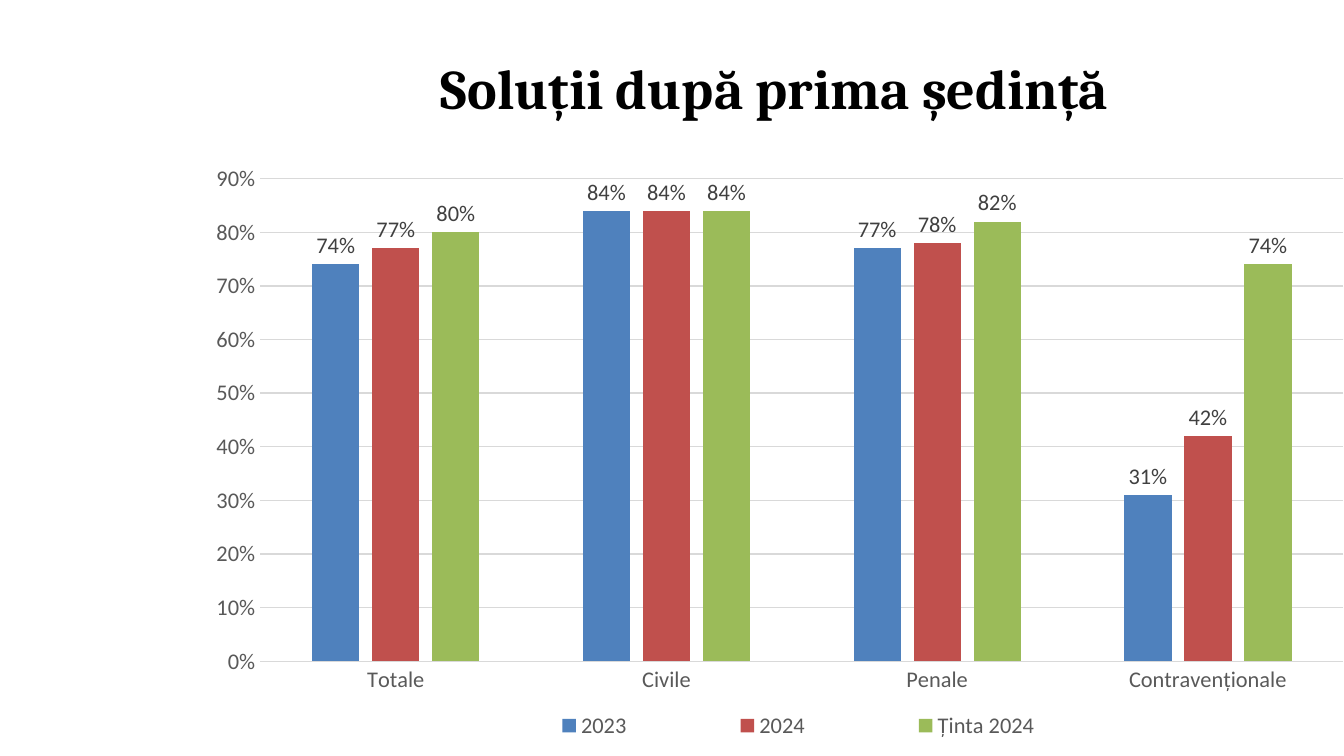
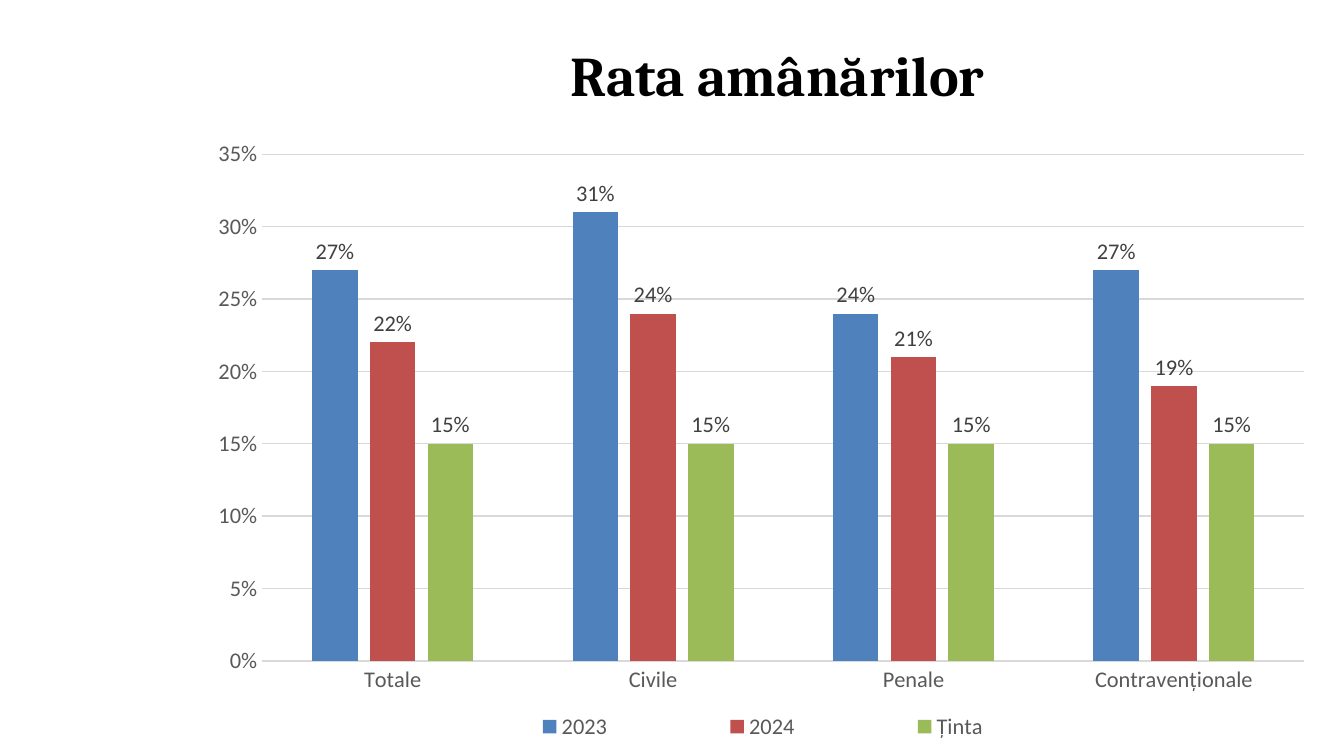
from dataclasses import dataclass

from lxml.etree import SubElement
from pptx import Presentation
from pptx.chart.data import CategoryChartData
from pptx.dml.color import RGBColor
from pptx.enum.chart import (XL_CHART_TYPE, XL_LABEL_POSITION,
                             XL_LEGEND_POSITION, XL_TICK_MARK)
from pptx.enum.text import MSO_ANCHOR, PP_ALIGN
from pptx.oxml import parse_xml
from pptx.oxml.ns import nsdecls, qn
from pptx.util import Inches, Pt


@dataclass(frozen=True)
class Theme:
    title_font: str = "Cambria"
    chart_font: str = "Calibri"
    title_size: int = 30
    chart_size: int = 12
    title_color: str = "000000"
    axis_color: str = "595959"
    label_color: str = "404040"
    grid_color: str = "D9D9D9"
    series_colors: tuple = ("4F81BD", "C0504D", "9BBB59")
    grid_width: float = 0.75


THEME = Theme()
PERCENT = "0%"
CASE_TYPES = ["Totale", "Civile", "Penale", "Contravenționale"]

# Boxes are left, top, width, height in inches;
# plot and legend are the same in percent of the chart.
SLIDES = [
    {
        "title": "Soluții după prima ședință",
        "title_box": (2.25, 0.39, 7.03, 0.51),
        "chart_box": (1.35, 0.12, 8.65, 5.5),
        "plot": (6.8, 22, 93.2, 65.3),
        "legend": (23.6, 92.5, 59, 7),
        "scale": (0.9, 0.1),
        "rates": {
            "2023": (0.74, 0.84, 0.77, 0.31),
            "2024": (0.77, 0.84, 0.78, 0.42),
            "Ținta 2024": (0.8, 0.84, 0.82, 0.74),
        },
    },
    {
        "title": "Rata amânărilor",
        "title_box": (1.78, 0.25, 8.01, 0.61),
        "chart_box": (1.31, 0.79, 8.69, 4.84),
        "plot": (7.4, 7.4, 89.2, 77.9),
        "legend": (21.5, 91.4, 57.5, 8),
        "scale": (0.35, 0.05),
        "rates": {
            "2023": (0.27, 0.31, 0.24, 0.27),
            "2024": (0.22, 0.24, 0.21, 0.19),
            "Ținta": (0.15, 0.15, 0.15, 0.15),
        },
    },
]


def style_font(font, name, size, color):
    font.name = name
    font.size = Pt(size)
    font.color.rgb = RGBColor.from_string(color)


def style_chart_font(font, color):
    style_font(font, THEME.chart_font, THEME.chart_size, color)


def style_line(line):
    line.color.rgb = RGBColor.from_string(THEME.grid_color)
    line.width = Pt(THEME.grid_width)


def add_title(slide, title, box):
    frame = slide.shapes.add_textbox(*map(Inches, box)).text_frame
    frame.word_wrap = True
    frame.vertical_anchor = MSO_ANCHOR.MIDDLE
    frame.text = title
    heading = frame.paragraphs[0]
    heading.alignment = PP_ALIGN.CENTER
    font = heading.runs[0].font
    style_font(font, THEME.title_font, THEME.title_size, THEME.title_color)
    font.bold = True


def place_part(part, box, position, target=()):
    """Give a chart part a fixed layout as its child number position."""
    for layout in part.findall(qn("c:layout")):
        part.remove(layout)
    layout = parse_xml(f"<c:layout {nsdecls('c')}/>")
    part.insert(position, layout)
    manual = SubElement(layout, qn("c:manualLayout"))
    shares = [round(percent / 100, 3) for percent in box]
    settings = [*target, ("xMode", "edge"), ("yMode", "edge"), *zip("xywh", shares)]
    for tag, value in settings:
        SubElement(manual, qn(f"c:{tag}")).set("val", str(value))


def place_parts(chart, plot, legend):
    """Fix the plot and legend and leave the chart background clear."""
    chart_part = chart.element.find(qn("c:chart"))
    place_part(chart_part.find(qn("c:plotArea")), plot, 0, [("layoutTarget", "inner")])
    place_part(chart_part.find(qn("c:legend")), legend, 1)
    chart_part.addnext(parse_xml(
        f"<c:spPr {nsdecls('c', 'a')}><a:noFill/><a:ln><a:noFill/></a:ln></c:spPr>"))


def style_axes(chart, scale):
    rate_axis, case_axis = chart.value_axis, chart.category_axis
    for axis in (rate_axis, case_axis):
        axis.major_tick_mark = axis.minor_tick_mark = XL_TICK_MARK.NONE
        style_chart_font(axis.tick_labels.font, THEME.axis_color)
    style_line(case_axis.format.line)
    rate_axis.format.line.fill.background()
    rate_axis.has_major_gridlines = True
    style_line(rate_axis.major_gridlines.format.line)
    rate_axis.minimum_scale = 0
    rate_axis.maximum_scale, rate_axis.major_unit = scale
    rate_axis.tick_labels.number_format = PERCENT
    rate_axis.tick_labels.number_format_is_linked = False


def style_columns(columns):
    columns.vary_by_categories = False
    columns.gap_width = 219
    columns.overlap = -27
    for series, color in zip(columns.series, THEME.series_colors):
        series.format.fill.solid()
        series.format.fill.fore_color.rgb = RGBColor.from_string(color)
        labels = series.data_labels
        labels.show_value = True
        labels.position = XL_LABEL_POSITION.OUTSIDE_END
        labels.number_format = PERCENT
        labels.number_format_is_linked = False
        style_chart_font(labels.font, THEME.label_color)


def add_rate_chart(slide, content):
    rate_data = CategoryChartData(number_format=PERCENT)
    rate_data.categories = CASE_TYPES
    for period, values in content["rates"].items():
        rate_data.add_series(period, values)
    chart = slide.shapes.add_chart(XL_CHART_TYPE.COLUMN_CLUSTERED,
                                   *map(Inches, content["chart_box"]), rate_data).chart
    chart.has_title = False
    style_chart_font(chart.font, THEME.axis_color)
    chart.has_legend = True
    chart.legend.position = XL_LEGEND_POSITION.BOTTOM
    chart.legend.include_in_layout = False
    style_chart_font(chart.legend.font, THEME.axis_color)
    style_axes(chart, content["scale"])
    style_columns(chart.plots[0])
    place_parts(chart, content["plot"], content["legend"])


def main():
    deck = Presentation()
    deck.slide_width = Inches(10)
    deck.slide_height = deck.slide_width * 9 // 16
    for content in SLIDES:
        slide = deck.slides.add_slide(deck.slide_layouts[6])
        add_title(slide, content["title"], content["title_box"])
        add_rate_chart(slide, content)
    deck.save("out.pptx")


if __name__ == "__main__":
    main()
